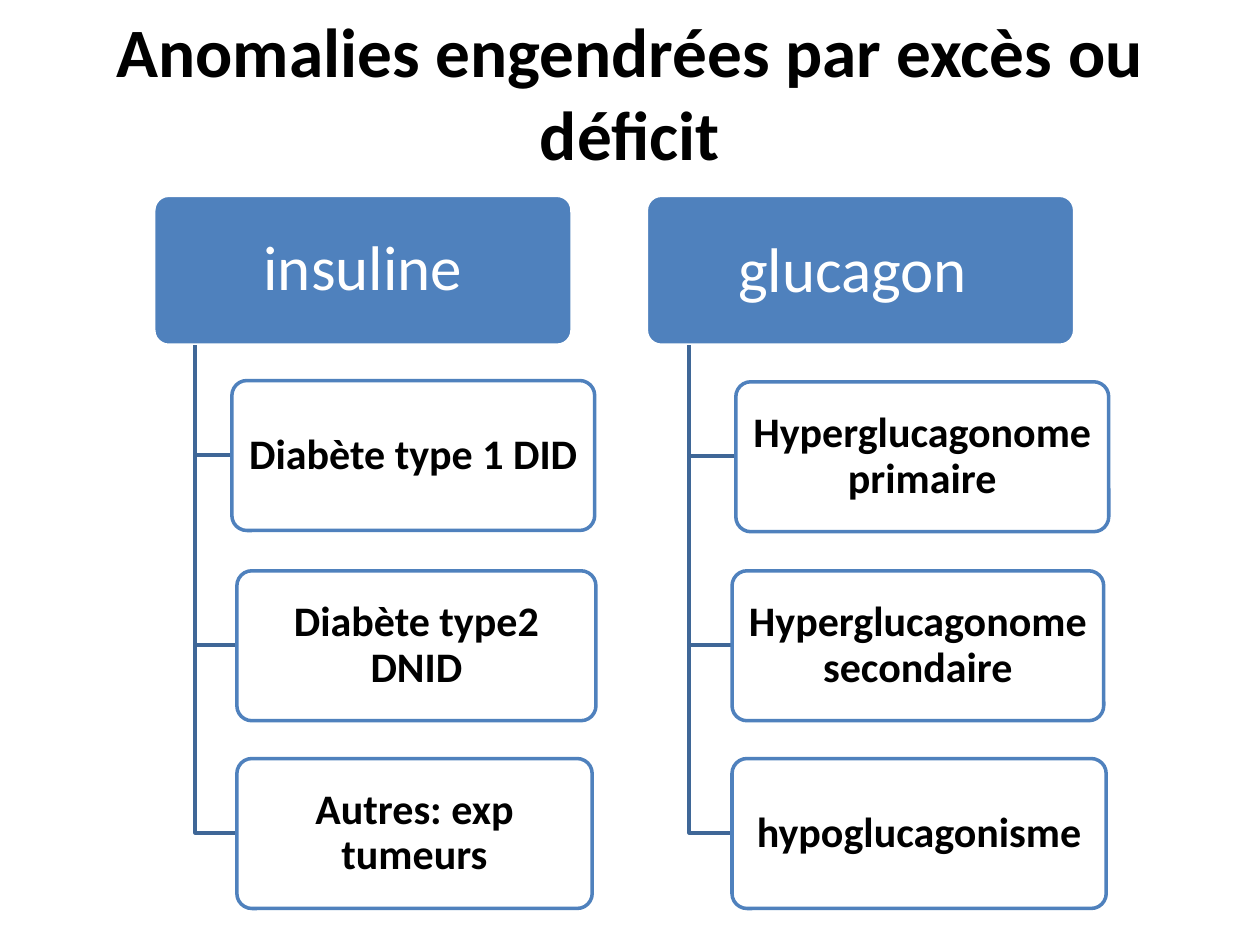
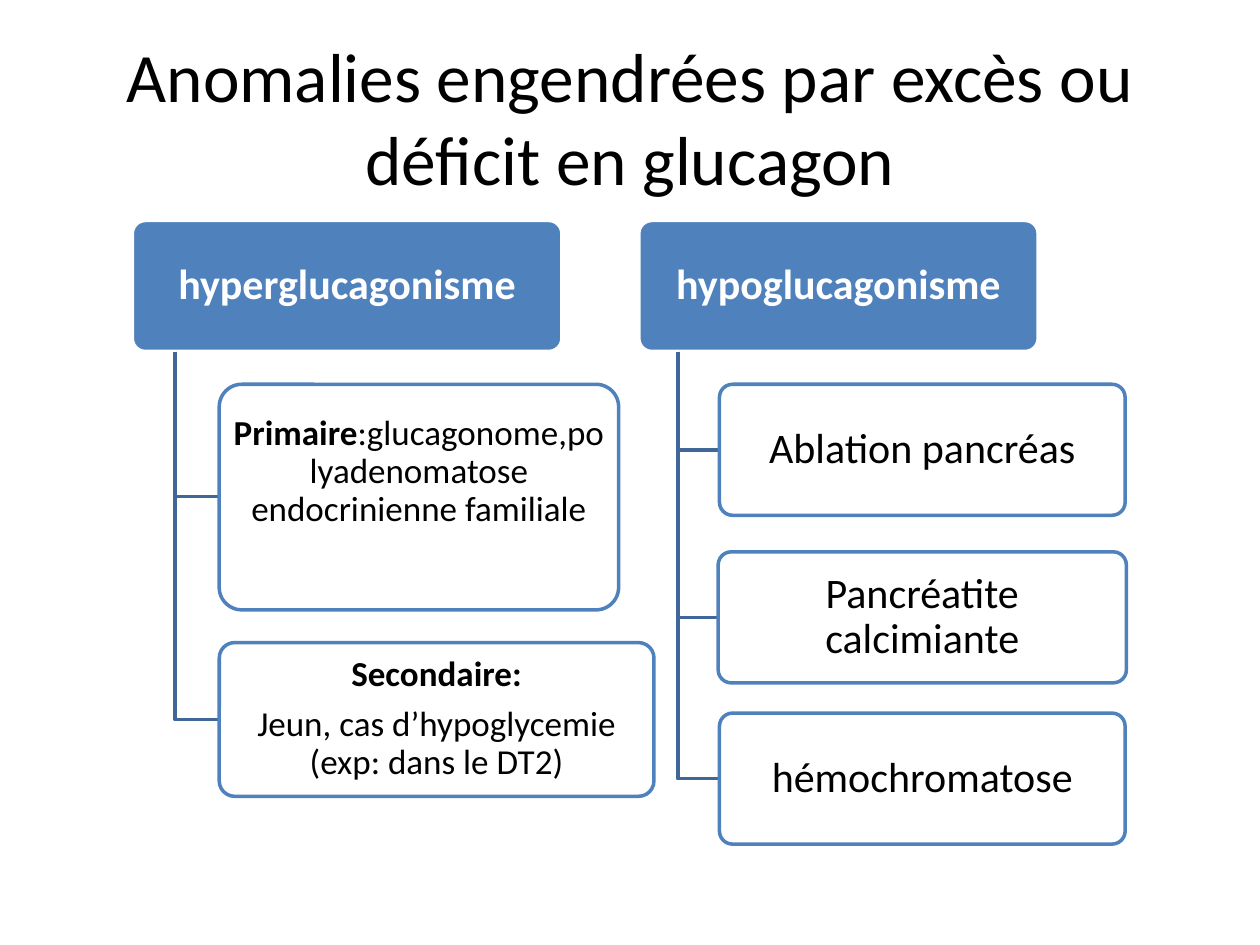
import pptx
import pptx.util
import pptx.dml.color
import pptx.enum.shapes
import pptx.enum.text
import lxml.etree

PX = 9144  # EMU per px, 100 px to the inch
FONT = "Calibri"
BLUE, TRUNK, WHITE, BLACK = "4F81BD", "3F6797", "FFFFFF", "000000"
BOX_LINE = 2
TITLE_SIZE = 39.6


def rgb(code):
    return pptx.dml.color.RGBColor.from_string(code)


class Deck:
    def __init__(self, width, height):
        self.prs = pptx.Presentation()
        self.prs.slide_width, self.prs.slide_height = width * PX, height * PX
        self.s = None

    def slide(self):
        self.s = self.prs.slides.add_slide(self.prs.slide_layouts[6])

    def text(self, sp, paragraphs, color, insets=(10, 5, 10, 5), **para_format):
        """Each paragraph is a list of (text, size, bold) runs."""
        tf = sp.text_frame
        left, top, right, bottom = (n * PX for n in insets)
        frame = dict(word_wrap=True, margin_left=left, margin_top=top,
                     margin_right=right, margin_bottom=bottom,
                     vertical_anchor=pptx.enum.text.MSO_ANCHOR.MIDDLE)
        for name, value in frame.items():
            setattr(tf, name, value)
        for i, runs in enumerate(paragraphs):
            p = tf.add_paragraph() if i else tf.paragraphs[0]
            para_format["alignment"] = pptx.enum.text.PP_ALIGN.CENTER
            for name, value in para_format.items():
                setattr(p, name, value)
            for words, size, bold in runs:
                r = p.add_run()
                r.text = words
                font = dict(name=FONT, size=pptx.util.Pt(size), bold=bold)
                for name, value in font.items():
                    setattr(r.font, name, value)
                r.font.color.rgb = rgb(color)

    def title(self, words, height, bold=False):
        sp = self.s.shapes.add_textbox(50 * PX, 30 * PX, 900 * PX, height * PX)
        self.text(sp, [[(words, TITLE_SIZE, bold)]], BLACK)

    def box(self, rect, paragraphs, fill, line, color, insets, alpha=None):
        sp = self.s.shapes.add_shape(
            pptx.enum.shapes.MSO_SHAPE.ROUNDED_RECTANGLE, *(n * PX for n in rect))
        sp.adjustments[0] = 0.1
        sp.shadow.inherit = False
        sp.fill.solid()
        sp.fill.fore_color.rgb = rgb(fill)
        if alpha:
            clr = sp.fill._xPr.solidFill[0]
            tag = clr.tag.replace("srgbClr", "alpha")
            lxml.etree.SubElement(clr, tag).set("val", str(alpha * 1000))
        sp.line.color.rgb = rgb(line)
        sp.line.width = pptx.util.Pt(BOX_LINE)
        self.text(sp, paragraphs, color, insets, line_spacing=0.9,
                  space_after=pptx.util.Pt(0.35 * paragraphs[0][0][1]))

    def elbow(self, x, top, end_x, end_y):
        builder = self.s.shapes.build_freeform(x * PX, top * PX)
        builder.add_line_segments([(x * PX, end_y * PX), (end_x * PX, end_y * PX)],
                                  close=False)
        sp = builder.convert_to_shape()
        sp.shadow.inherit = False
        sp.fill.background()
        sp.line.color.rgb = rgb(TRUNK)
        sp.line.width = pptx.util.Pt(BOX_LINE)

    def branch(self, head_rect, head_runs, head_insets, children):
        """A head box with children hung from a trunk at a tenth of its width."""
        x, y, w, h = head_rect
        self.box(head_rect, [head_runs], BLUE, WHITE, WHITE, head_insets)
        for rect, paragraphs, insets in children:
            self.elbow(x + w // 10, y + h, rect[0], rect[1] + rect[3] // 2)
            self.box(rect, paragraphs, WHITE, BLUE, BLACK, insets, alpha=90)


HEAD_INSETS = (7, 5, 7, 5)
BOX_INSETS = (5, 3, 5, 3)
NOTE_INSETS = (4, 3, 4, 3)
RAISED_INSETS = (4, 3, 4, 43)  # lifts the text above the middle


def simple(words, rect, bold):
    return rect, [[(words, 24, bold)]], BOX_INSETS


def main():
    deck = Deck(1000, 750)

    # Slide 1: insulin and glucagon
    deck.slide()
    deck.title("Anomalies engendrées par excès ou déficit", 85, bold=True)
    deck.branch((122, 155, 332, 119), [("insuline", 36, False)], HEAD_INSETS, [
        simple("Diabète type 1 DID", (184, 302, 288, 119), True),
        simple("Diabète type2 DNID", (188, 453, 285, 119), True),
        simple("Autres: exp tumeurs", (188, 602, 282, 119), True),
    ])
    deck.branch((513, 155, 340, 119),
                [("glucagon", 36, False), (" ", 40, False)], HEAD_INSETS, [
        simple("Hyperglucagonome primaire", (584, 303, 296, 119), True),
        simple("Hyperglucagonome secondaire", (581, 453, 295, 119), True),
        simple("hypoglucagonisme", (581, 602, 297, 119), True),
    ])

    # Slide 2: glucagon in detail
    deck.slide()
    deck.title("Anomalies engendrées par excès ou déficit en glucagon", 125)
    deck.branch((105, 175, 341, 104), [("hyperglucagonisme", 24, True)], BOX_INSETS, [
        ((174, 305, 317, 179),
         [[("Primaire", 20, True),
           (":glucagonome,polyadenomatose endocrinienne familiale", 20, False)]],
         RAISED_INSETS),
        ((174, 510, 345, 122),
         [[("Secondaire:", 20, True)],
          [("Jeun, cas d’hypoglycemie (exp: dans le DT2)", 20, False)]],
         NOTE_INSETS),
    ])
    deck.branch((507, 175, 317, 104), [("hypoglucagonisme", 24, True)], BOX_INSETS, [
        simple("Ablation pancréas", (571, 305, 322, 104), False),
        simple("Pancréatite calcimiante", (570, 438, 324, 104), False),
        simple("hémochromatose", (571, 566, 322, 104), False),
    ])

    deck.prs.save("out.pptx")


if __name__ == "__main__":
    main()
